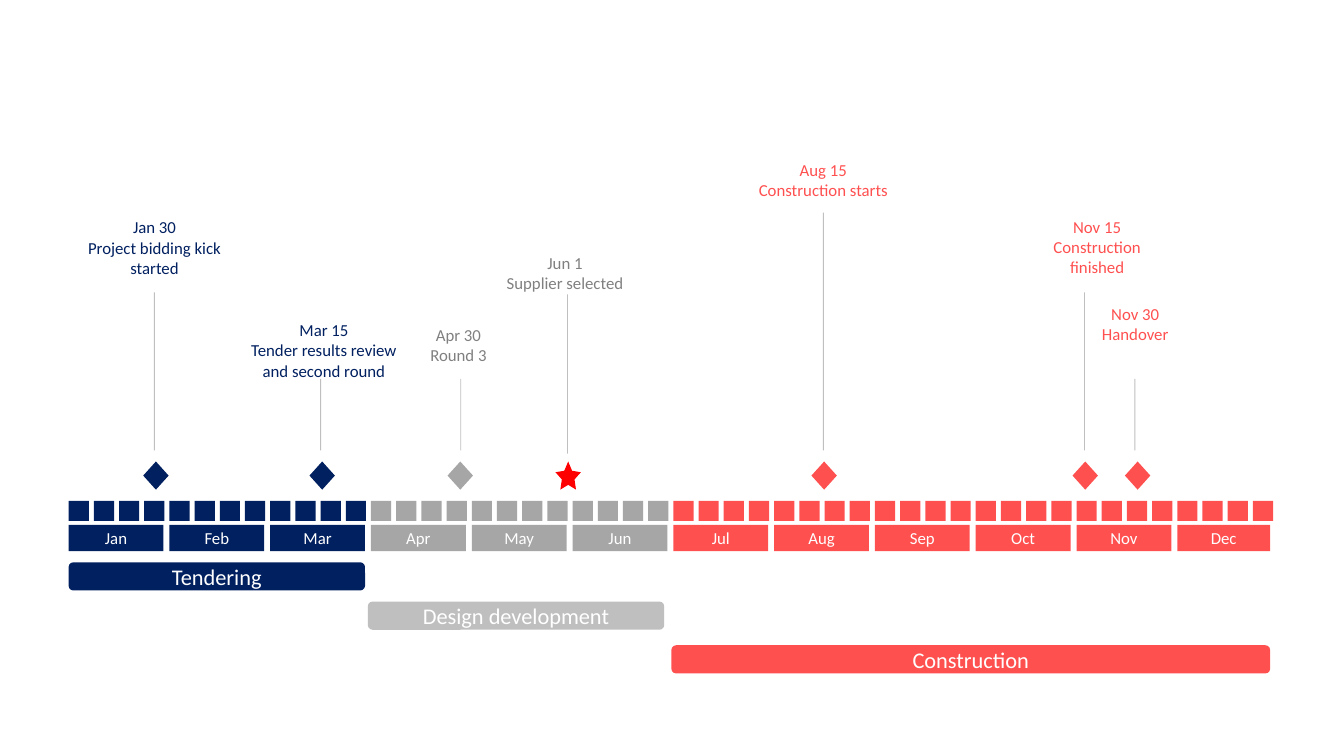
from dataclasses import dataclass

import pptx
import pptx.dml.color
import pptx.enum.shapes
import pptx.enum.text
import pptx.oxml.ns
import pptx.util
from lxml import etree

Cm = pptx.util.Cm
SHAPE = pptx.enum.shapes.MSO_SHAPE
ANCHOR = pptx.enum.text.MSO_ANCHOR
qn = pptx.oxml.ns.qn

FONT = "Calibri"
NAVY, GREY, RED = "002060", "A6A6A6", "FF5050"
WHITE, TEXT_GREY, LIGHT_GREY, STAR_RED = "FFFFFF", "808080", "BFBFBF", "FF0000"

# Time axis, in cm
LEFT = 1.73
MONTH_PITCH = 2.54
WEEKS = 4
WEEK_TOP, WEEK_SIZE = 12.62, 0.51
MONTH_TOP, MONTH_W, MONTH_H = 13.23, 2.39, 0.66
DEC_W = 2.34
MONTHS = ("Jan", "Feb", "Mar", "Apr", "May", "Jun",
          "Jul", "Aug", "Sep", "Oct", "Nov", "Dec")
QUARTER_COLOURS = (NAVY, GREY, RED, RED)

MARKER_TOP, MARKER_W, MARKER_H = 11.63, 0.64, 0.71
BAR_H = 0.71


@dataclass
class Milestone:
    date: str
    name: str
    box: tuple[float, float, float, float]
    line_x: float
    line_top: float
    marker_x: float
    text_colour: str
    marker_colour: str
    line_end: float = 11.35
    star: bool = False
    tight: bool = False  # no insets, centred vertically


@dataclass
class Phase:
    name: str
    left: float
    top: float
    width: float
    colour: str


MILESTONES = (
    Milestone("Jan 30", "Project bidding kick started", (1.8, 5.46, 4.19, 1.55),
              3.89, 7.37, 3.61, NAVY, NAVY, tight=True),
    Milestone("Mar 15", "Tender results review and second round", (6.07, 8.05, 4.19, 1.55),
              8.08, 9.55, 7.8, NAVY, NAVY, tight=True),
    Milestone("Apr 30", "Round 3", (10.36, 8.05, 2.39, 1.27),
              11.61, 9.55, 11.28, TEXT_GREY, GREY),
    Milestone("Jun 1", "Supplier selected", (12.27, 6.25, 3.94, 1.27),
              14.3, 7.42, 14.0, TEXT_GREY, STAR_RED, line_end=11.43, star=True),
    Milestone("Aug 15", "Construction starts", (18.49, 3.89, 4.52, 1.27),
              20.75, 5.36, 20.45, RED, RED),
    Milestone("Nov 15", "Construction finished", (25.68, 5.33, 3.94, 1.8),
              27.33, 7.37, 27.03, RED, RED),
    Milestone("Nov 30", "Handover", (26.64, 7.52, 3.94, 1.27),
              28.6, 9.55, 28.35, RED, RED),
)

PHASES = (
    Phase("Tendering", LEFT, 14.17, 7.47, NAVY),
    Phase("Design development", 9.27, 15.16, 7.47, LIGHT_GREY),
    Phase("Construction", 16.92, 16.26, 15.09, RED),
)


def rgb(colour: str) -> pptx.dml.color.RGBColor:
    return pptx.dml.color.RGBColor.from_string(colour)


def write(tf, lines: tuple[str, ...], size: int, colour: str) -> None:
    tf.word_wrap = True
    for i, line in enumerate(lines):
        p = tf.add_paragraph() if i else tf.paragraphs[0]
        p.alignment = pptx.enum.text.PP_ALIGN.CENTER
        r = p.add_run()
        r.text = line
        r.font.name = FONT
        r.font.size = pptx.util.Pt(size)
        r.font.color.rgb = rgb(colour)


def add_block(s, kind, left: float, top: float, width: float, height: float,
              colour: str, text: str = "", size: int = 12):
    sp = s.shapes.add_shape(kind, Cm(left), Cm(top), Cm(width), Cm(height))
    sp.shadow.inherit = False
    sp.fill.solid()
    sp.fill.fore_color.rgb = rgb(colour)
    sp.line.fill.background()
    if text:
        sp.text_frame.vertical_anchor = ANCHOR.MIDDLE
        write(sp.text_frame, (text,), size, WHITE)
    return sp


def add_leader(s, x: float, top: float, bottom: float) -> None:
    cn = s.shapes.add_connector(pptx.enum.shapes.MSO_CONNECTOR.STRAIGHT,
                                Cm(x), Cm(top), Cm(x), Cm(bottom))
    cn.line.width = pptx.util.Pt(0.6)
    cn.line.color.rgb = rgb(TEXT_GREY)
    sp_pr = cn.element.spPr
    clr = next(sp_pr.iter(qn("a:srgbClr")))
    etree.SubElement(clr, qn("a:alpha")).set("val", "50000")
    etree.SubElement(sp_pr, qn("a:effectLst"))


def add_milestone(s, m: Milestone) -> None:
    tf = s.shapes.add_textbox(*map(Cm, m.box)).text_frame
    if m.tight:
        tf.margin_left = tf.margin_right = tf.margin_top = tf.margin_bottom = 0
        tf.vertical_anchor = ANCHOR.MIDDLE
    write(tf, (m.date, m.name), 12, m.text_colour)
    tf.auto_size = pptx.enum.text.MSO_AUTO_SIZE.SHAPE_TO_FIT_TEXT
    add_leader(s, m.line_x, m.line_top, m.line_end)
    kind = SHAPE.STAR_5_POINT if m.star else SHAPE.DIAMOND
    marker = add_block(s, kind, m.marker_x, MARKER_TOP, MARKER_W, MARKER_H, m.marker_colour)
    if m.star:
        marker.adjustments[0] = 0.25


def main() -> None:
    prs = pptx.Presentation()
    prs.slide_width, prs.slide_height = Cm(33.87), Cm(19.05)
    s = prs.slides.add_slide(prs.slide_layouts[6])

    # Months and their weeks
    for i, month in enumerate(MONTHS):
        x = LEFT + i * MONTH_PITCH
        colour = QUARTER_COLOURS[i // 3]
        width = DEC_W if month == "Dec" else MONTH_W
        add_block(s, SHAPE.RECTANGLE, x, MONTH_TOP, width, MONTH_H, colour, month)
        for week in range(WEEKS):
            add_block(s, SHAPE.RECTANGLE, x + week * MONTH_PITCH / WEEKS, WEEK_TOP,
                      WEEK_SIZE, WEEK_SIZE, colour)

    # Milestones above the axis
    for m in MILESTONES:
        add_milestone(s, m)

    # Phase bars below the axis
    for ph in PHASES:
        add_block(s, SHAPE.ROUNDED_RECTANGLE, ph.left, ph.top, ph.width, BAR_H,
                  ph.colour, ph.name, 16)

    prs.save("out.pptx")


if __name__ == "__main__":
    main()
